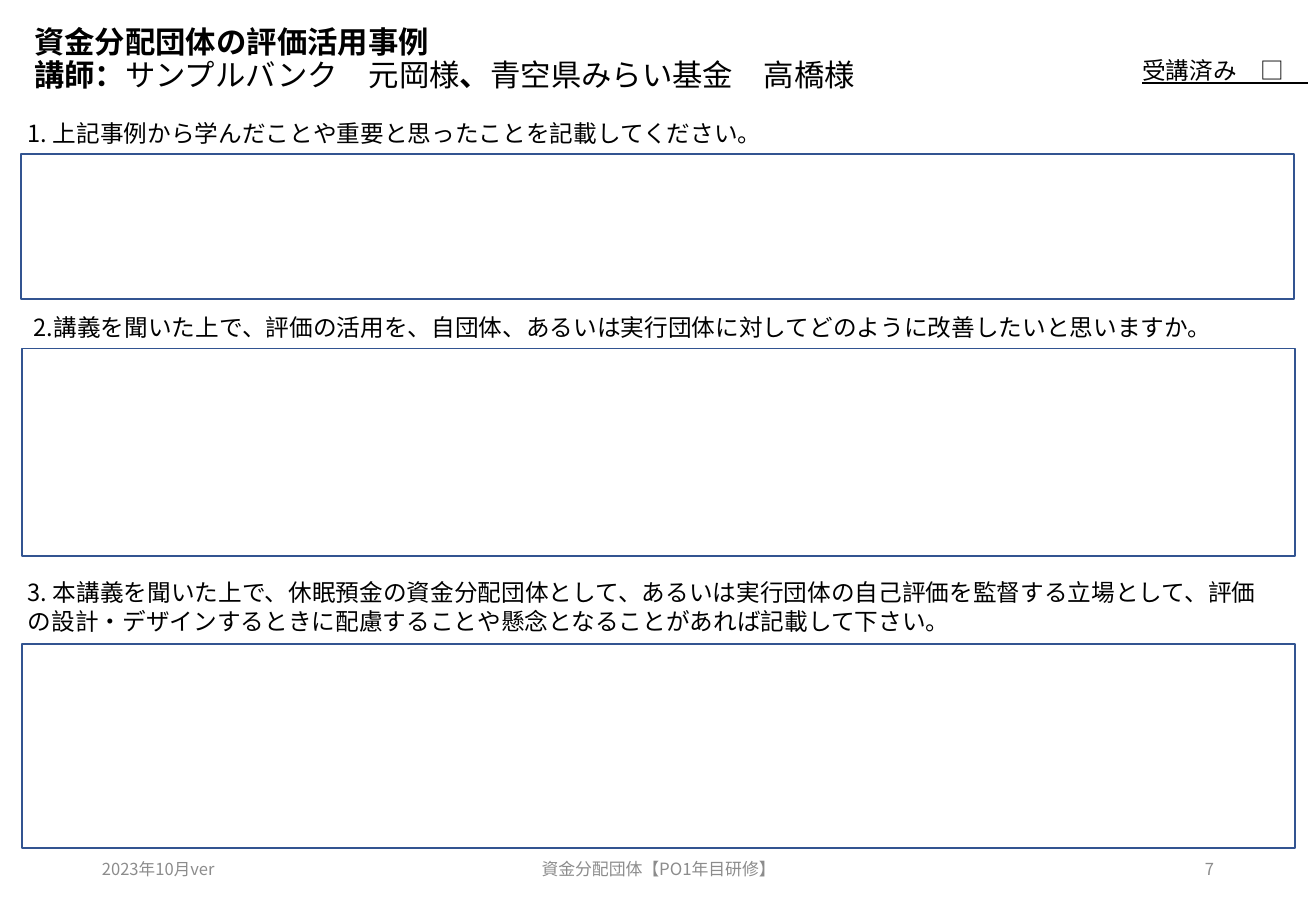
from pptx import Presentation
from pptx.dml.color import RGBColor
from pptx.enum.shapes import MSO_SHAPE
from pptx.enum.text import MSO_ANCHOR, PP_ALIGN
from pptx.oxml.ns import qn
from pptx.util import Inches, Pt
from lxml.etree import SubElement

FONT = "Noto Sans CJK JP"
BLACK = RGBColor(0x00, 0x00, 0x00)
WHITE = RGBColor(0xFF, 0xFF, 0xFF)
BLUE = RGBColor(0x32, 0x54, 0x91)
GRAY = RGBColor(0x8C, 0x8C, 0x8C)

COLUMN_WIDTH = 10.48
FOOTER_TOP, FOOTER_HEIGHT = 6.95, 0.4

TITLE_RUNS = [
    ("資金分配団体の評価活用事例\v講師：", True),
    ("サンプルバンク　元岡様", False),
    ("、", True),
    ("青空県みらい基金　高橋様", False),
]
QUESTIONS = [
    ("1. 上記事例から学んだことや重要と思ったことを記載してください。",
     (0.13, 0.93, 0.34), (0.17, 1.27, 1.19)),
    ("2.講義を聞いた上で、評価の活用を、自団体、あるいは実行団体に対してどのように改善したいと思いますか。",
     (0.18, 2.53, 0.34), (0.18, 2.87, 1.71)),
    ("3. 本講義を聞いた上で、休眠預金の資金分配団体として、あるいは実行団体の自己評価を監督する立場として、"
     "評価の設計・デザインするときに配慮することや懸念となることがあれば記載して下さい。",
     (0.13, 4.71, 0.57), (0.18, 5.3, 1.68)),
]
FOOTERS = [
    ("2023年10月ver", 0.74, 2.44, 9.8, PP_ALIGN.LEFT),
    ("資金分配団体【PO1年目研修】", 3.59, 3.66, 10, PP_ALIGN.CENTER),
    ("7", 7.65, 2.44, 9.8, PP_ALIGN.RIGHT),
]


def format_paragraph(paragraph, size, color):
    font = paragraph.font
    font.name, font.size = FONT, Pt(size)
    font.color.rgb = color
    properties = paragraph._p.pPr.find(qn("a:defRPr"))
    SubElement(properties, qn("a:ea")).set("typeface", FONT)


def add_title(slide):
    title = slide.shapes.title
    title.left, title.top = Inches(0.18), Inches(0)
    title.width, title.height = Inches(9.92), Inches(0.99)
    frame = title.text_frame
    frame.word_wrap = True
    frame.vertical_anchor = MSO_ANCHOR.MIDDLE
    paragraph = frame.paragraphs[0]
    paragraph.alignment = PP_ALIGN.LEFT
    paragraph.line_spacing = 0.9
    format_paragraph(paragraph, 18, BLACK)
    for position, (text, bold) in enumerate(TITLE_RUNS):
        if position == 0:
            paragraph.text = text
            for run in paragraph.runs:
                run.font.bold = bold
        else:
            run = paragraph.add_run()
            run.text = text
            run.font.bold = bold


def add_text(slide, text, left, top, width, height, size=14, color=BLACK,
             alignment=PP_ALIGN.LEFT, anchor=MSO_ANCHOR.TOP):
    box = slide.shapes.add_textbox(Inches(left), Inches(top), Inches(width), Inches(height))
    frame = box.text_frame
    frame.word_wrap = True
    frame.vertical_anchor = anchor
    paragraph = frame.paragraphs[0]
    paragraph.text = text
    paragraph.alignment = alignment
    format_paragraph(paragraph, size, color)
    return paragraph


def add_answer_box(slide, left, top, height):
    box = slide.shapes.add_shape(MSO_SHAPE.RECTANGLE, Inches(left), Inches(top),
                                 Inches(COLUMN_WIDTH), Inches(height))
    box.shadow.inherit = False
    box.fill.solid()
    box.fill.fore_color.rgb = WHITE
    box.line.color.rgb = BLUE
    box.line.width = Pt(1)


def main():
    presentation = Presentation()
    presentation.slide_width, presentation.slide_height = Inches(10.83), Inches(7.5)
    slide = presentation.slides.add_slide(presentation.slide_layouts[5])
    add_title(slide)
    for question, (left, top, height), answer in QUESTIONS:
        add_text(slide, question, left, top, COLUMN_WIDTH, height)
        add_answer_box(slide, *answer)
    attended = add_text(slide, "受講済み　□　", 9.3, 0.41, 2.01, 0.34)
    attended.font.underline = True
    for text, left, width, size, alignment in FOOTERS:
        add_text(slide, text, left, FOOTER_TOP, width, FOOTER_HEIGHT, size, GRAY,
                 alignment, MSO_ANCHOR.MIDDLE)
    presentation.save("out.pptx")


if __name__ == "__main__":
    main()
